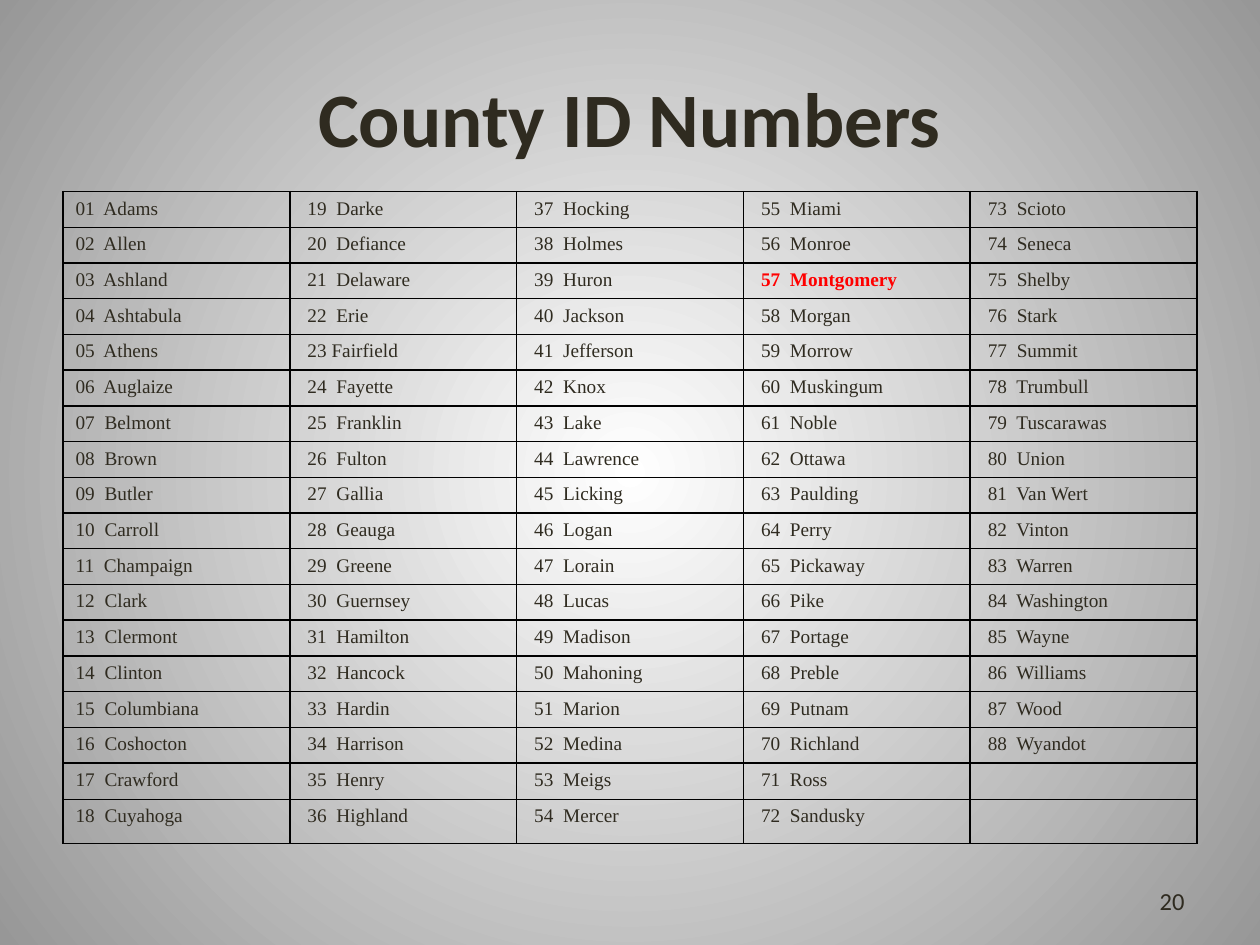
import pptx
import pptx.dml.color
import pptx.enum.text
import pptx.oxml
import pptx.oxml.ns
import pptx.util
import lxml.etree

THEME = {
    "ink": "2F2B20", "alert": "FF0000", "line": "000000",
    "glow": "FFFFFF", "edge": "979797",
    "head": "Calibri", "body": "Times New Roman",
    "title": 44, "cell": 11, "page": 14,
}
NAMES = """Adams Allen Ashland Ashtabula Athens Auglaize Belmont Brown Butler
Carroll Champaign Clark Clermont Clinton Columbiana Coshocton Crawford Cuyahoga
Darke Defiance Delaware Erie Fairfield Fayette Franklin Fulton Gallia
Geauga Greene Guernsey Hamilton Hancock Hardin Harrison Henry Highland
Hocking Holmes Huron Jackson Jefferson Knox Lake Lawrence Licking
Logan Lorain Lucas Madison Mahoning Marion Medina Meigs Mercer
Miami Monroe Montgomery Morgan Morrow Muskingum Noble Ottawa Paulding
Perry Pickaway Pike Portage Preble Putnam Richland Ross Sandusky
Scioto Seneca Shelby Stark Summit Trumbull Tuscarawas Union Van_Wert
Vinton Warren Washington Wayne Williams Wood Wyandot""".split()
COLS, ROWS = 5, 18
SPACE = 0.04
HANG = 0.38
inch = pptx.util.Inches
rgb = pptx.dml.color.RGBColor.from_string
qn = pptx.oxml.ns.qn
align = pptx.enum.text.PP_ALIGN
middle = pptx.enum.text.MSO_ANCHOR.MIDDLE


def write(para, text, face, size, color="ink", bold=False):
    run = para.add_run()
    run.text = text
    run.font.name = THEME[face]
    run.font.size = pptx.util.Pt(THEME[size])
    run.font.color.rgb = rgb(THEME[color])
    run.font.bold = bold


def rule(cell):
    """Line all four sides of a cell."""
    props = cell._tc.get_or_add_tcPr()
    for spot, side in enumerate(("lnL", "lnR", "lnT", "lnB")):
        props.insert(spot, pptx.oxml.parse_xml(
            f'<a:{side} {pptx.oxml.ns.nsdecls("a")} w="12700"><a:solidFill>'
            f'<a:srgbClr val="{THEME["line"]}"/></a:solidFill></a:{side}>'))


deck = pptx.Presentation()
deck.slide_width, deck.slide_height = inch(10), inch(7.5)
wide, high = deck.slide_width, deck.slide_height
slide = deck.slides.add_slide(deck.slide_layouts[5])

# Background: a round glow from the middle
fill = slide.background.fill
fill.gradient()
for stop, name in zip(fill.gradient_stops, ("glow", "edge")):
    stop.color.rgb = rgb(THEME[name])
for lin in list(slide.element.iter(qn("a:lin"))):
    grad = lin.getparent()
    grad.remove(lin)
    ring = lxml.etree.SubElement(grad, qn("a:path"), path="circle")
    lxml.etree.SubElement(ring, qn("a:fillToRect"),
                          l="50000", t="50000", r="50000", b="50000")

# Title
title = slide.shapes.title
title.left, title.top = int(wide * 0.05), int(high * 0.04)
title.width, title.height = int(wide * 0.9), inch(1.25)
title.text_frame.vertical_anchor = middle
para = title.text_frame.paragraphs[0]
para.alignment = align.CENTER
write(para, "County ID Numbers", "head", "title", bold=True)

# County table, numbered down each column
last = inch(0.35)
tall = inch(5.17)
frame = slide.shapes.add_table(ROWS, COLS, int(wide * 0.05), inch(1.52),
                               int(wide * 0.9), tall)
table = frame.table
table.first_row = table.horz_banding = False
for row in table.rows:
    row.height = (tall - last) // (ROWS - 1)
table.rows[ROWS - 1].height = last

for spot in range(ROWS * COLS):
    col, row = divmod(spot, ROWS)
    cell = table.cell(row, col)
    cell.fill.background()
    rule(cell)
    para = cell.text_frame.paragraphs[0]
    if spot >= len(NAMES):
        lxml.etree.SubElement(para._p, qn("a:endParaRPr"),
                              sz=str(THEME["cell"] * 100))
        continue
    props = para._p.get_or_add_pPr()
    props.set("marL", str(inch(HANG)))
    props.set("indent", str(inch((SPACE if col else 0) - HANG)))
    name = NAMES[spot].replace("_", " ")
    gap = " " if name == "Fairfield" else "  "
    hot = name == "Montgomery"
    write(para, f"{spot + 1:02}{gap}{name}", "body", "cell",
          "alert" if hot else "ink", hot)

# Page number
page = slide.shapes.add_textbox(inch(7.17), inch(6.95), inch(2.33), inch(0.4))
page.text_frame.word_wrap = True
page.text_frame.vertical_anchor = middle
para = page.text_frame.paragraphs[0]
para.alignment = align.RIGHT
write(para, "20", "head", "page")

deck.save("out.pptx")
